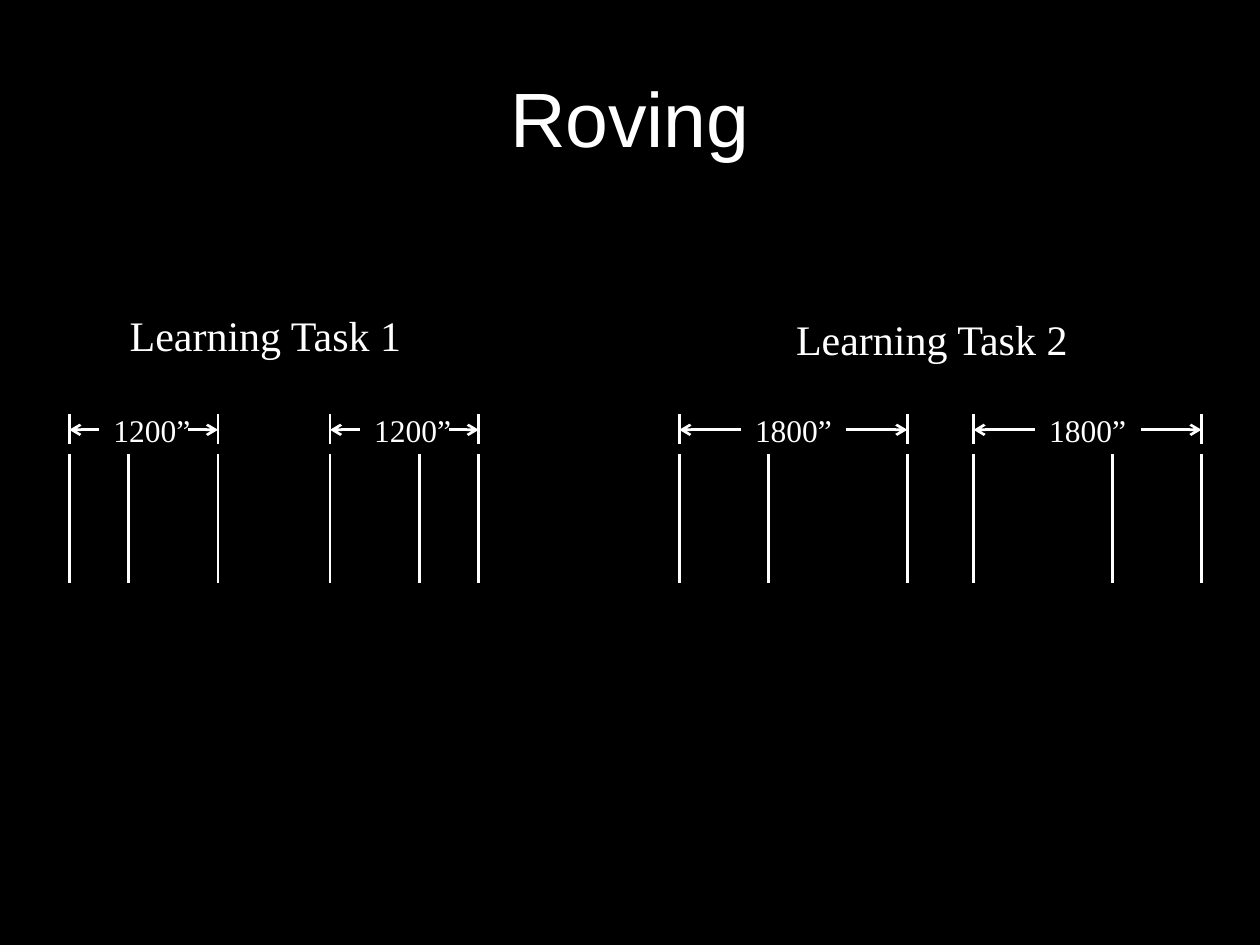
from pptx import Presentation
from pptx.dml.color import RGBColor
from pptx.enum.shapes import MSO_CONNECTOR
from pptx.enum.text import MSO_ANCHOR, PP_ALIGN
from pptx.oxml.ns import qn
from pptx.util import Pt
from lxml.etree import SubElement


def color(hex_string):
    return RGBColor.from_string(hex_string)


class Deck:
    INK = "FFFFFF"
    PAPER = "000000"
    SERIF = "Times New Roman"
    LINE_WIDTH = 1.5

    def __init__(self, prs):
        self.slide = prs.slides.add_slide(prs.slide_layouts[6])
        fill = self.slide.background.fill
        fill.solid()
        fill.fore_color.rgb = color(self.PAPER)

    def text(self, shapes, text, x, y, w, h, size, font=SERIF,
             align=PP_ALIGN.LEFT, anchor=MSO_ANCHOR.TOP):
        sp = shapes.add_textbox(Pt(x), Pt(y), Pt(w), Pt(h))
        tf = sp.text_frame
        tf.word_wrap = True
        tf.vertical_anchor = anchor
        tf.text = text
        p = tf.paragraphs[0]
        p.alignment = align
        r = p.runs[0]
        r.font.size = Pt(size)
        r.font.name = font
        r.font.color.rgb = color(self.INK)

    def line(self, shapes, x1, y1, x2, y2, arrow=False):
        sp = shapes.add_connector(MSO_CONNECTOR.STRAIGHT,
                                  Pt(x1), Pt(y1), Pt(x2), Pt(y2))
        sp.line.color.rgb = color(self.INK)
        sp.line.width = Pt(self.LINE_WIDTH)
        if arrow:
            SubElement(sp.line._get_or_add_ln(), qn("a:tailEnd"), type="arrow")
        SubElement(sp._element.spPr, qn("a:effectLst"))

    def stimulus(self, x, width, middle, label, label_dx, right_dx):
        """Three bars under a dimension line that gives their span."""
        shapes = self.slide.shapes.add_group_shape().shapes
        right = x + width
        for bar_x in (x, x + middle, right):
            self.line(shapes, bar_x, 259.5, bar_x, 333)
        for tick_x in (x, right):
            self.line(shapes, tick_x, 236.7, tick_x, 254)
        self.line(shapes, x + label_dx, 245.6, x, 245.6, arrow=True)
        self.line(shapes, x + right_dx, 245.6, right, 245.6, arrow=True)
        self.text(shapes, label, x + label_dx, 231.2, 60.5, 29, 18,
                  align=PP_ALIGN.CENTER)


def main():
    prs = Presentation()
    prs.slide_width, prs.slide_height = Pt(720), Pt(540)
    deck = Deck(prs)
    shapes = deck.slide.shapes

    # Title
    deck.text(shapes, "Roving", 36, 21.6, 648, 90, 44, "Arial",
              PP_ALIGN.CENTER, MSO_ANCHOR.MIDDLE)

    # Stimuli: each task has a pair with the middle bar offset either way
    narrow = ("1200”", 17, 68)
    wide = ("1800”", 35, 95.5)
    for x, width, middle, dimension in (
        (39.6, 85, 34, narrow),
        (188.6, 85, 51, narrow),
        (388.2, 130.3, 51, wide),
        (556.3, 130.3, 79.3, wide),
    ):
        deck.stimulus(x, width, middle, *dimension)

    # Task headings
    for text, x, y in (("Learning Task 1", 67, 173.5),
                       ("Learning Task 2", 447.8, 175.7)):
        deck.text(shapes, text, x, y, 179.3, 36, 24)

    prs.save("out.pptx")


if __name__ == "__main__":
    main()
